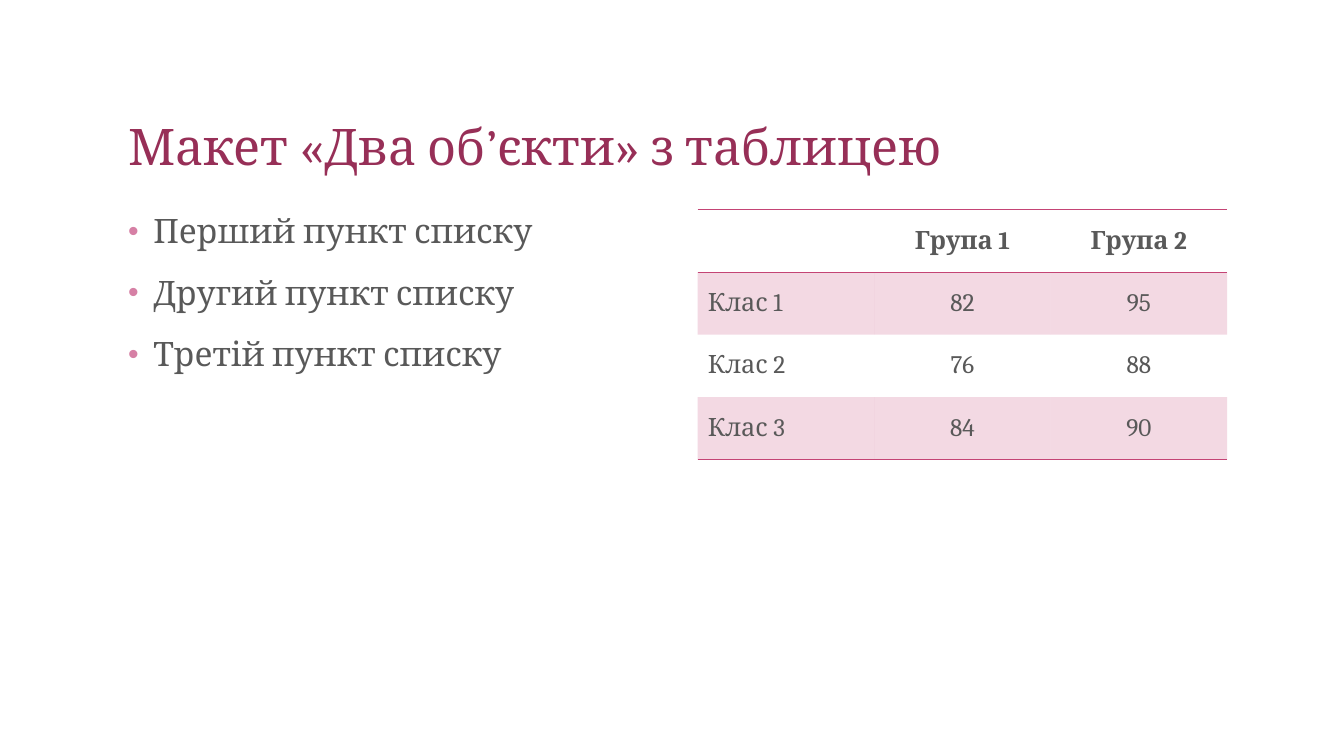
"""Build a slide with a bullet list beside a table of group scores."""
from dataclasses import dataclass

from lxml import etree
from pptx import Presentation
from pptx.dml.color import RGBColor
from pptx.enum.text import MSO_ANCHOR, MSO_AUTO_SIZE, PP_ALIGN
from pptx.oxml.ns import qn
from pptx.util import Inches, Pt

LEFT, CENTER = PP_ALIGN.LEFT, PP_ALIGN.CENTER
MIDDLE, BOTTOM, TOP = MSO_ANCHOR.MIDDLE, MSO_ANCHOR.BOTTOM, MSO_ANCHOR.TOP
FIT, FIXED = MSO_AUTO_SIZE.TEXT_TO_FIT_SHAPE, MSO_AUTO_SIZE.NONE
FACE = "Cambria"
PLUM, ROSE, PINK, GRAY = "972F57", "C44475", "D680A5", "595959"
POINTS = ["Перший пункт списку", "Другий пункт списку", "Третій пункт списку"]
ROWS = [
    ["", "Група 1", "Група 2"],
    ["Клас 1", "82", "95"],
    ["Клас 2", "76", "88"],
    ["Клас 3", "84", "90"],
]
COL, ROW = 1.75, 0.62


@dataclass
class Box:
    """Place and size in inches."""
    x: float
    y: float
    w: float
    h: float


HEAD = Box(1.17, 0.5, 11, 1.3)
LIST = Box(1.17, 2.08, 5.25, 4.67)
GRID = Box(6.92, 2.08, 3 * COL, 4 * ROW)


def color(code: str) -> RGBColor:
    """Turn a hex string into a colour."""
    return RGBColor.from_string(code)


def move(shape, box: Box, anchor, fit) -> None:
    """Set the place and text anchor of a placeholder."""
    shape.left, shape.top = Inches(box.x), Inches(box.y)
    shape.width, shape.height = Inches(box.w), Inches(box.h)
    frame = shape.text_frame
    frame.word_wrap, frame.vertical_anchor, frame.auto_size = True, anchor, fit


def write(para, text: str, size: int, code: str, bold: bool = False) -> None:
    """Add one formatted run to a paragraph."""
    run = para.add_run()
    run.text = text
    font = run.font
    font.name, font.size, font.bold = FACE, Pt(size), bold
    font.color.rgb = color(code)


def bullet(para) -> None:
    """Give a paragraph a hanging pink bullet."""
    props = para._p.get_or_add_pPr()
    props.set("marL", str(Inches(0.25)))
    props.set("indent", str(-Inches(0.25)))
    tint = etree.SubElement(props, qn("a:buClr"))
    etree.SubElement(tint, qn("a:srgbClr"), val=PINK)
    etree.SubElement(props, qn("a:buSzPct"), val="90000")
    etree.SubElement(props, qn("a:buFont"), typeface="Arial")
    etree.SubElement(props, qn("a:buChar"), char="•")


def border(cell, side: str, shown: bool) -> None:
    """Draw or hide one side of a cell."""
    line = etree.SubElement(cell._tc.get_or_add_tcPr(), qn(f"a:ln{side}"), w=str(Pt(1)))
    if shown:
        fill = etree.SubElement(line, qn("a:solidFill"))
        etree.SubElement(fill, qn("a:srgbClr"), val=ROSE)
    else:
        etree.SubElement(line, qn("a:noFill"))


def shade(cell, band: bool) -> None:
    """Fill a banded cell with pale rose and clear any other."""
    if not band:
        cell.fill.background()
        return
    cell.fill.solid()
    cell.fill.fore_color.rgb = color(ROSE)
    tint = cell._tc.tcPr.find(f".//{qn('a:solidFill')}[last()]/..")
    tint = cell._tc.tcPr.findall(qn("a:solidFill"))[0][0]
    etree.SubElement(tint, qn("a:alpha"), val="20000")


def add_grid(slide) -> None:
    """Add the score table."""
    size = [Inches(n) for n in (GRID.x, GRID.y, GRID.w, GRID.h)]
    table = slide.shapes.add_table(len(ROWS), len(ROWS[0]), *size).table
    table.horz_banding = False
    for col in table.columns:
        col.width = Inches(COL)
    for r, texts in enumerate(ROWS):
        table.rows[r].height = Inches(ROW)
        for c, text in enumerate(texts):
            cell = table.cell(r, c)
            cell.vertical_anchor = MIDDLE
            for side in "LRTB":
                edge = r + (side == "B")
                border(cell, side, side in "TB" and edge in (0, 1, len(ROWS)))
            shade(cell, r % 2 == 1)
            para = cell.text_frame.paragraphs[0]
            para.alignment = CENTER if c else LEFT
            if text:
                write(para, text, 18, GRAY, r == 0)


def main() -> None:
    """Build and save the slide."""
    deck = Presentation()
    deck.slide_width, deck.slide_height = Inches(13.33), Inches(7.5)
    slide = deck.slides.add_slide(deck.slide_layouts[1])
    title, body = slide.placeholders
    move(title, HEAD, BOTTOM, FIXED)
    para = title.text_frame.paragraphs[0]
    para.alignment, para.line_spacing = LEFT, 0.9
    write(para, title_text := "Макет «Два об’єкти» з таблицею", 36, PLUM)
    move(body, LIST, TOP, FIT)
    frame = body.text_frame
    for i, text in enumerate(POINTS):
        para = frame.add_paragraph() if i else frame.paragraphs[0]
        bullet(para)
        para.line_spacing, para.space_before = 0.9, Pt(18 if i else 0)
        write(para, text, 24, GRAY)
    add_grid(slide)
    deck.save("out.pptx")


if __name__ == "__main__":
    main()
